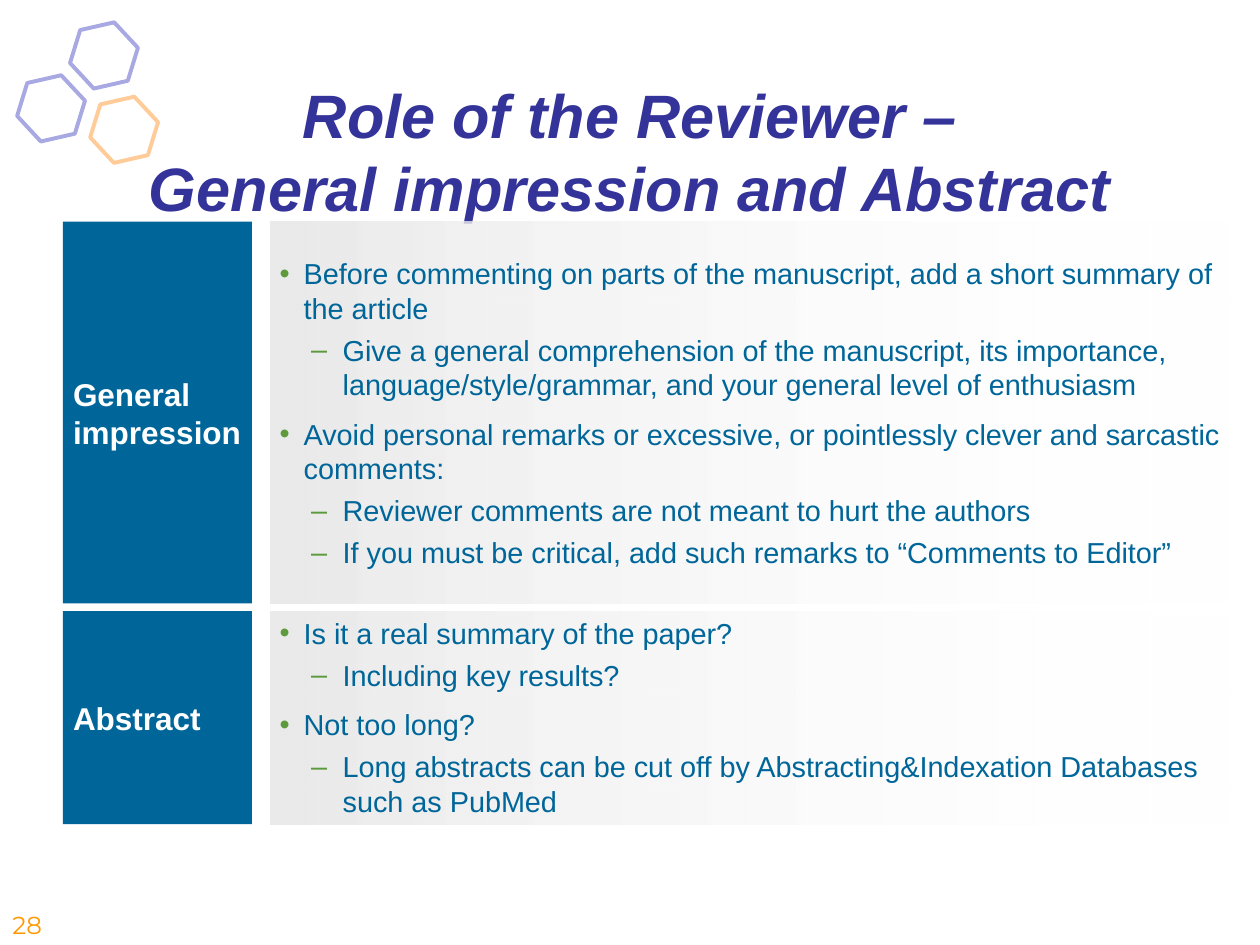
from lxml import etree
from pptx import Presentation
from pptx.dml.color import RGBColor
from pptx.enum.shapes import MSO_SHAPE
from pptx.enum.text import MSO_ANCHOR, MSO_AUTO_SIZE, PP_ALIGN
from pptx.oxml.ns import qn
from pptx.util import Inches, Pt

RECT, HEXAGON = MSO_SHAPE.RECTANGLE, MSO_SHAPE.HEXAGON
MIDDLE, NO_FIT = MSO_ANCHOR.MIDDLE, MSO_AUTO_SIZE.NONE
LEFT, CENTER = PP_ALIGN.LEFT, PP_ALIGN.CENTER
BLUE, GREEN, WHITE = "006699", "5D9A3C", "FFFFFF"

# Per list level: bullet, left margin, hanging indent, space before
LEVELS = [("•", 0.19, 0.19, 8.4), ("–", 0.5, 0.25, 4.2)]
LABEL_X, LABEL_W = 0.5, 1.5
BAND_X, BAND_W = 2.15, 7.65
LIST_X, LIST_W = 2.22, 7.5

# Label, row top, row height, list top, list height, (level, text) items
ROWS = [
    ("General impression", 1.76, 3.03, 1.99, 2.57, [
        (0, "Before commenting on parts of the manuscript, add a short summary of\nthe article"),
        (1, "Give a general comprehension of the manuscript, its importance, "
            "language/style/grammar, and your general level of enthusiasm"),
        (0, "Avoid personal remarks or excessive, or pointlessly clever and sarcastic comments:"),
        (1, "Reviewer comments are not meant to hurt the authors"),
        (1, "If you must be critical, add such remarks to “Comments to Editor”"),
    ]),
    ("Abstract", 4.85, 1.69, 4.86, 1.66, [
        (0, "Is it a real summary of the paper?"),
        (1, "Including key results?"),
        (0, "Not too long?"),
        (1, "Long abstracts can be cut off by Abstracting&Indexation Databases such as PubMed"),
    ]),
]


def rgb(color):
    return RGBColor.from_string(color)


def add_text(p, text, size, color, bold=False, italic=False, name="Arial"):
    """Add text run by run, with a line break at each newline."""
    for i, line in enumerate(text.split("\n")):
        if i:
            p.add_line_break()
        r = p.add_run()
        r.text = line
        r.font.name, r.font.size = name, Pt(size)
        r.font.bold, r.font.italic = bold, italic
        r.font.color.rgb = rgb(color)


prs = Presentation()
prs.slide_width, prs.slide_height = Inches(10), Inches(7.5)
s = prs.slides.add_slide(prs.slide_layouts[3])
title, *lists = s.placeholders

# Corner hexagons
for x, y, color in [(0.55, 0.2, "A8A8E2"), (0.13, 0.62, "A8A8E2"), (0.71, 0.79, "FFCC99")]:
    sp = s.shapes.add_shape(HEXAGON, Inches(x), Inches(y), Inches(0.55), Inches(0.48))
    sp.adjustments[0] = 0.288
    sp.rotation = 107.1
    sp.shadow.inherit = False
    sp.fill.background()
    sp.line.color.rgb = rgb(color)
    sp.line.width = Pt(2.25)

# Title
s.shapes._spTree.append(title._element)
title.left, title.top = Inches(0.5), Inches(0.76)
title.width, title.height = Inches(9), Inches(0.87)
tf = title.text_frame
tf.auto_size, tf.vertical_anchor = NO_FIT, MIDDLE
tf.paragraphs[0].alignment = CENTER
add_text(tf.paragraphs[0], "Role of the Reviewer –\nGeneral impression and Abstract",
         35, "333399", bold=True, italic=True)

# Slide number
sp = s.shapes.add_textbox(0, Inches(7.17), Inches(0.67), Inches(0.33))
sp.text_frame.word_wrap = True
add_text(sp.text_frame.paragraphs[0], "28", 14, "FF9900", name="Montserrat")

# Rows: label, fading band, list
for body, (label, top, height, list_top, list_h, items) in zip(lists, ROWS):
    box = s.shapes.add_shape(RECT, Inches(LABEL_X), Inches(top), Inches(LABEL_W), Inches(height))
    band = s.shapes.add_shape(RECT, Inches(BAND_X), Inches(top), Inches(BAND_W), Inches(height))
    for sp in (box, band):
        sp.shadow.inherit = False
        sp.line.fill.background()

    box.fill.solid()
    box.fill.fore_color.rgb = rgb(BLUE)
    tf = box.text_frame
    tf.word_wrap, tf.vertical_anchor = True, MIDDLE
    tf.margin_left = tf.margin_right = tf.margin_top = tf.margin_bottom = Inches(0.08)
    tf.paragraphs[0].alignment = LEFT
    add_text(tf.paragraphs[0], label, 18, WHITE, bold=True)

    band.fill.gradient()
    band.fill.gradient_angle = 0
    start, end = band.fill.gradient_stops
    start.position, end.position = 0, 1
    start.color.rgb, end.color.rgb = rgb("EAEAEA"), rgb(WHITE)
    clear = band._element.spPr.findall(".//" + qn("a:srgbClr"))[-1]
    etree.SubElement(clear, qn("a:alpha"), val="0")

    s.shapes._spTree.append(body._element)
    body.left, body.top = Inches(LIST_X), Inches(list_top)
    body.width, body.height = Inches(LIST_W), Inches(list_h)
    tf = body.text_frame
    tf.word_wrap, tf.auto_size, tf.vertical_anchor = True, NO_FIT, MIDDLE
    tf.margin_left = tf.margin_right = tf.margin_top = tf.margin_bottom = 0
    for i, (level, text) in enumerate(items):
        p = tf.add_paragraph() if i else tf.paragraphs[0]
        bullet, margin, hang, before = LEVELS[level]
        p.level = level
        p.space_before = Pt(before if i else 0)
        pPr = p._p.get_or_add_pPr()
        pPr.set("marL", str(Inches(margin)))
        pPr.set("indent", str(-Inches(hang)))
        bu_color = etree.SubElement(pPr, qn("a:buClr"))
        etree.SubElement(bu_color, qn("a:srgbClr"), val=GREEN)
        etree.SubElement(pPr, qn("a:buFont"), typeface="Arial")
        etree.SubElement(pPr, qn("a:buChar"), char=bullet)
        add_text(p, text, 16.5, BLUE)

prs.save("out.pptx")
